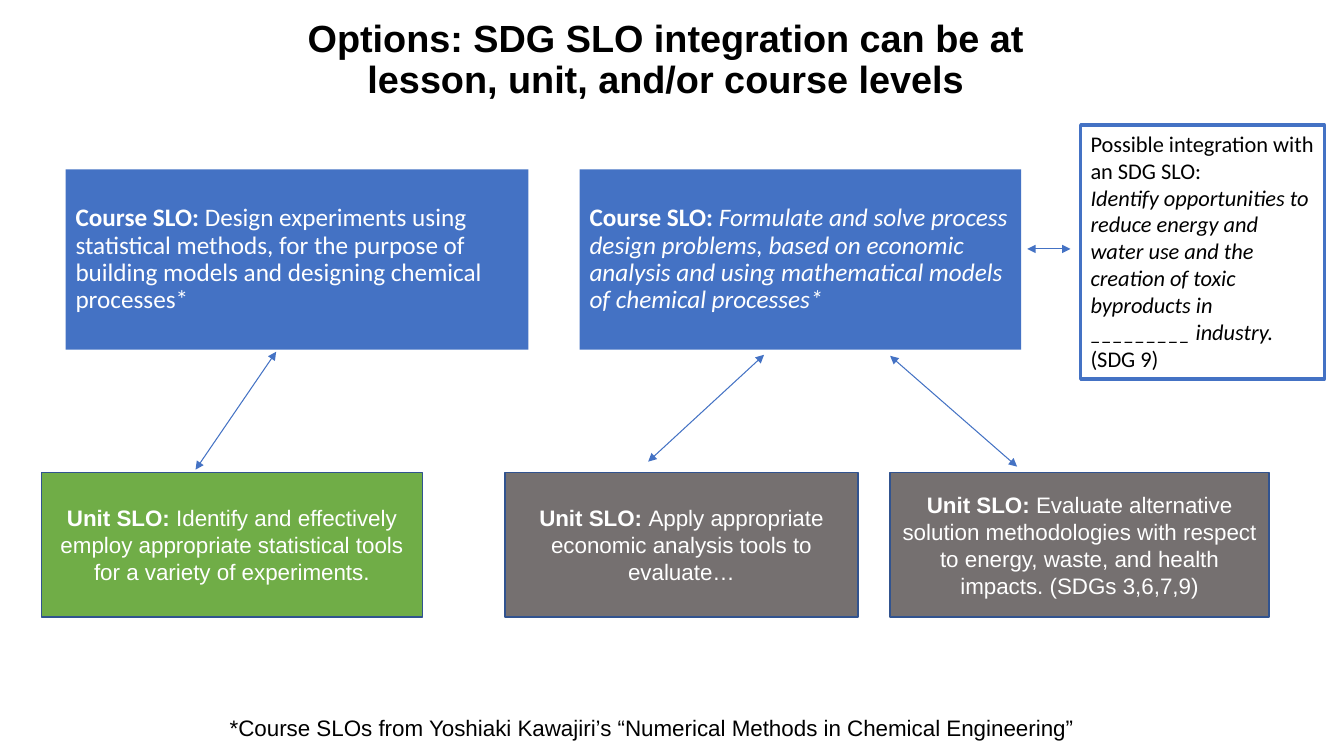
"""Build a slide on integrating SDG outcomes at lesson, unit and course levels."""
from pptx import Presentation
from pptx.dml.color import RGBColor
from pptx.enum.shapes import MSO_CONNECTOR, MSO_SHAPE
from pptx.enum.text import MSO_ANCHOR, PP_ALIGN
from pptx.oxml.ns import qn
from pptx.util import Inches, Pt
from lxml.etree import SubElement

BLACK = RGBColor(0x00, 0x00, 0x00)
WHITE = RGBColor(0xFF, 0xFF, 0xFF)
BLUE = RGBColor(0x44, 0x72, 0xC4)
NAVY = RGBColor(0x31, 0x53, 0x8F)
GREEN = RGBColor(0x70, 0xAD, 0x47)
GREY = RGBColor(0x75, 0x70, 0x70)

PLAIN, BOLD, SLANT = {}, {"bold": True}, {"italic": True}
HEAD = {"name": "Arial", "size": Pt(27), "bold": True}
BODY = {"name": "Arial", "size": Pt(16)}
COURSE = {"name": "Calibri", "size": Pt(18)}
ASIDE = {"name": "Calibri", "size": Pt(16)}
TOP = {"vertical_anchor": MSO_ANCHOR.TOP}
MID = {"vertical_anchor": MSO_ANCHOR.MIDDLE}
CENTER = {"alignment": PP_ALIGN.CENTER}
TIGHT = {"line_spacing": 0.9}


class Board:
    """Hold the slide and draw on a grid of 100 columns by 100 rows."""

    def __init__(self, deck):
        self.slide = deck.slides.add_slide(deck.slide_layouts[6])
        self.col = deck.slide_width / 100
        self.row = deck.slide_height / 100

    def place(self, spot):
        """Turn columns and rows into lengths."""
        return [round(n * unit) for n, unit in zip(spot, (self.col, self.row) * 2)]

    def letter(self, shape, paras, font, color, para, anchor):
        """Fill a shape with paragraphs of styled runs."""
        frame = shape.text_frame
        frame.word_wrap = True
        for key, value in anchor.items():
            setattr(frame, key, value)
        for i, runs in enumerate(paras):
            line = frame.add_paragraph() if i else frame.paragraphs[0]
            for key, value in ({"alignment": PP_ALIGN.LEFT} | para).items():
                setattr(line, key, value)
            for text, style in runs:
                run = line.add_run()
                run.text = text
                for key, value in (font | style).items():
                    setattr(run.font, key, value)
                run.font.color.rgb = color

    def label(self, spot, paras, font, para=PLAIN, anchor=TOP):
        """Add a text box."""
        shape = self.slide.shapes.add_textbox(*self.place(spot))
        self.letter(shape, paras, font, BLACK, para, anchor)

    def box(self, spot, paras, font, color, para, anchor, fill=None, edge=None, width=1):
        """Add a rectangle with text."""
        shape = self.slide.shapes.add_shape(MSO_SHAPE.RECTANGLE, *self.place(spot))
        shape.shadow.inherit = False
        if fill is None:
            shape.fill.background()
        else:
            shape.fill.solid()
            shape.fill.fore_color.rgb = fill
        if edge is None:
            shape.line.fill.background()
        else:
            shape.line.color.rgb = edge
            shape.line.width = Pt(width)
        self.letter(shape, paras, font, color, para, anchor)

    def arrow(self, ends):
        """Add a line with an arrowhead at both ends."""
        link = self.slide.shapes.add_connector(MSO_CONNECTOR.STRAIGHT, *self.place(ends))
        link.line.color.rgb = BLUE
        link.line.width = Pt(0.75)
        props = link._element.spPr
        for tag in ("a:headEnd", "a:tailEnd"):
            SubElement(props.get_or_add_ln(), qn(tag)).set("type", "triangle")
        SubElement(props, qn("a:effectLst"))


def main():
    """Draw the slide and save it."""
    deck = Presentation()
    deck.slide_width, deck.slide_height = Inches(13.33), Inches(7.5)
    board = Board(deck)

    title = "Options: SDG SLO integration can be at lesson, unit, and/or course levels"
    board.label((17.25, 1.73, 64.58, 12.53), [[(title, PLAIN)]], HEAD, CENTER | TIGHT, MID)

    courses = [
        (4.88, 34.43, PLAIN, "Design experiments using statistical methods, for the purpose "
         "of building models and designing chemical processes*"),
        (43.13, 32.85, SLANT, "Formulate and solve process design problems, based on economic "
         "analysis and using mathematical models of chemical processes*"),
    ]
    for left, width, style, goal in courses:
        board.box((left, 22.4, width, 23.87), [[("Course SLO: ", BOLD), (goal, style)]],
                  COURSE, WHITE, TIGHT, MID, BLUE)

    units = [
        (3.08, 28.35, GREEN, "Identify and effectively employ appropriate statistical tools "
         "for a variety of experiments."),
        (37.58, 26.25, GREY, "Apply appropriate economic analysis tools to evaluate…"),
        (66.23, 28.2, GREY, "Evaluate alternative solution methodologies with respect to "
         "energy, waste, and health impacts. (SDGs 3,6,7,9)"),
    ]
    for left, width, fill, goal in units:
        board.box((left, 62.53, width, 19.07), [[("Unit SLO: ", BOLD), (goal, PLAIN)]],
                  BODY, WHITE, CENTER, MID, fill, NAVY)

    source = "*Course SLOs from Yoshiaki Kawajiri’s “Numerical Methods in Chemical Engineering”"
    board.label((16.35, 93.87, 69.98, 4.93), [[(source, PLAIN)]], BODY)

    aside = [
        [("Possible integration with an SDG SLO:", PLAIN)],
        [("Identify opportunities to reduce energy and water use and the creation of toxic "
          "byproducts in _________ industry. ", SLANT), ("(SDG 9)", PLAIN)],
    ]
    board.box((80.4, 16.53, 18.15, 33.6), aside, ASIDE, BLACK, PLAIN, TOP,
              edge=BLUE, width=2.25)

    for ends in [
        (20.55, 46.53, 14.55, 62.13),
        (56.85, 46.93, 48.23, 61.07),
        (66.23, 47.07, 75.68, 61.73),
        (76.43, 32.93, 79.65, 32.93),
    ]:
        board.arrow(ends)

    deck.save("out.pptx")


if __name__ == "__main__":
    main()
